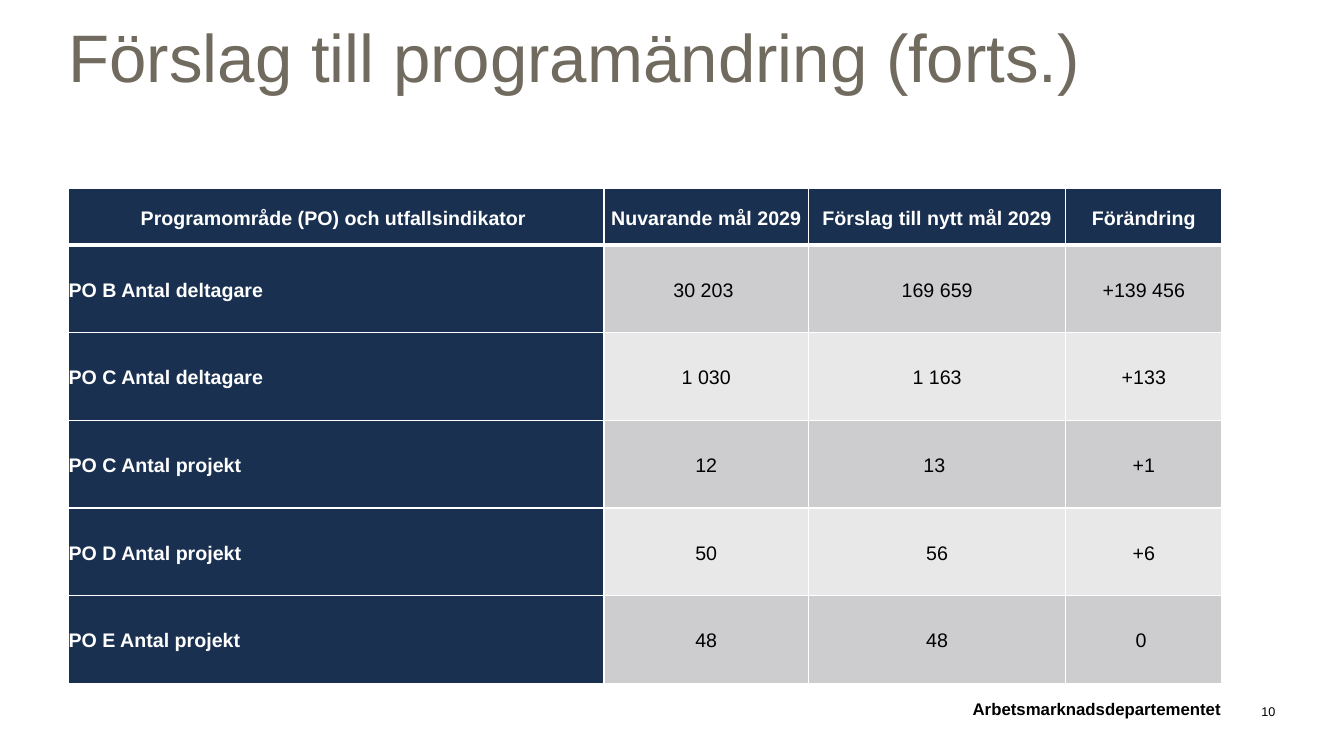
from lxml import etree
from pptx import Presentation
from pptx.dml.color import RGBColor
from pptx.enum.text import MSO_ANCHOR as Anchor, PP_ALIGN as Align
from pptx.oxml.ns import qn
from pptx.util import Inches, Pt

COLORS = {"title": "716B5F", "navy": "1A3050", "dark": "CDCDD0",
          "light": "E8E8E9", "white": "FFFFFF", "black": "000000"}

TITLE = "Förslag till programändring (forts.)"
DEPARTMENT = "Arbetsmarknadsdepartementet"
PAGE_NUMBER = "10"

ROWS = [
    ("Programområde (PO) och utfallsindikator ", "Nuvarande mål 2029",
     "Förslag till nytt mål 2029", "Förändring"),
    ("PO B Antal deltagare", "30 203 ", "169 659", "+139 456"),
    ("PO C Antal deltagare", "1 030", "1 163", "+133"),
    ("PO C Antal projekt", "12", "13 ", "+1"),
    ("PO D Antal projekt", "50", "56", "+6"),
    ("PO E Antal projekt", "48", "48", "0 "),
]
COLUMN_WIDTHS = (5.31, 2.03, 2.55, 1.55)
HEADER_HEIGHT, BODY_HEIGHT = 0.56, 0.87
LEFT, TABLE_TOP = 0.68, 1.87
FOOTER_TOP, FOOTER_HEIGHT = 6.89, 0.24


def rgb(name):
    return RGBColor.from_string(COLORS[name])


def write(para, text, size, color, bold=False, **para_format):
    for name, value in para_format.items():
        setattr(para, name, value)
    span = para.add_run()
    span.text = text
    span.font.color.rgb = rgb(color)
    for name, value in {"name": "Arial", "size": Pt(size), "bold": bold}.items():
        setattr(span.font, name, value)


def add_text(page, place, text, size, color, anchor, inset=0, **options):
    box = page.shapes.add_textbox(*map(Inches, place))
    frame = box.text_frame
    settings = {"word_wrap": True, "vertical_anchor": anchor,
                "margin_left": 0, "margin_right": 0,
                "margin_top": Inches(inset), "margin_bottom": Inches(inset)}
    for name, value in settings.items():
        setattr(frame, name, value)
    write(frame.paragraphs[0], text, size, color, **options)


def set_borders(cell, widths):
    """Draw white borders; widths maps the sides L, R, T, B to points."""
    properties = cell._tc.get_or_add_tcPr()
    for index, (side, width) in enumerate(widths.items()):
        line = etree.Element(qn(f"a:ln{side}"), w=str(Pt(width)))
        fill = etree.SubElement(line, qn("a:solidFill"))
        etree.SubElement(fill, qn("a:srgbClr"), val=COLORS["white"])
        properties.insert(index, line)


def add_goal_table(page):
    heights = [HEADER_HEIGHT] + [BODY_HEIGHT] * (len(ROWS) - 1)
    area = (LEFT, TABLE_TOP, sum(COLUMN_WIDTHS), sum(heights))
    table = page.shapes.add_table(len(ROWS), len(COLUMN_WIDTHS),
                                  *map(Inches, area)).table
    for column, width in zip(table.columns, COLUMN_WIDTHS):
        column.width = Inches(width)
    for row, height in zip(table.rows, heights):
        row.height = Inches(height)

    for r, texts in enumerate(ROWS):
        for c, text in enumerate(texts):
            heading = r == 0 or c == 0
            band = "dark" if r % 2 else "light"
            cell = table.cell(r, c)
            cell.vertical_anchor = Anchor.MIDDLE
            for side in ("left", "right", "top", "bottom"):
                setattr(cell, f"margin_{side}", 0)
            cell.fill.solid()
            cell.fill.fore_color.rgb = rgb("navy" if heading else band)
            set_borders(cell, {"L": 1, "R": 1, "T": 3 if r == 1 else 1,
                               "B": 3 if r == 0 else 1})
            write(cell.text_frame.paragraphs[0], text, 14,
                  "white" if heading else "black", bold=heading,
                  alignment=Align.LEFT if r and c == 0 else Align.CENTER,
                  line_spacing=1.15, space_after=Pt(14))


def main():
    deck = Presentation()
    deck.slide_width, deck.slide_height = Inches(13.33), Inches(7.5)
    page = deck.slides.add_slide(deck.slide_layouts[6])

    add_text(page, (LEFT, 0.1, 11.97, 1.13), TITLE, 48, "title",
             Anchor.TOP, inset=0.05)
    add_goal_table(page)
    for left, width, text, size, bold in (
            (3.29, 8.82, DEPARTMENT, 12, True),
            (12.12, 0.53, PAGE_NUMBER, 9, False)):
        add_text(page, (left, FOOTER_TOP, width, FOOTER_HEIGHT), text, size,
                 "black", Anchor.BOTTOM, bold=bold, alignment=Align.RIGHT,
                 space_after=Pt(6))
    deck.save("out.pptx")


if __name__ == "__main__":
    main()
